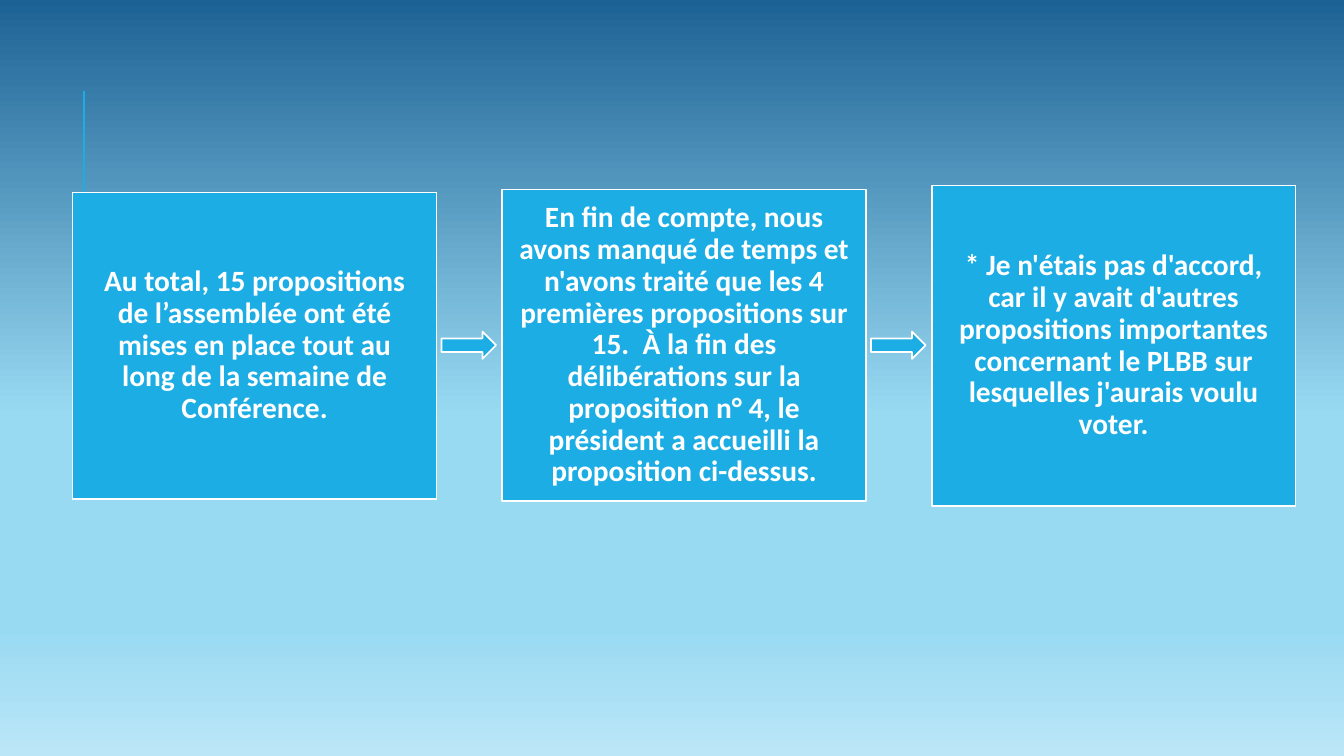
from dataclasses import dataclass

from lxml.etree import SubElement
from pptx import Presentation
from pptx.dml.color import RGBColor
from pptx.enum.shapes import MSO_CONNECTOR as Link, MSO_SHAPE as Kind
from pptx.enum.text import MSO_ANCHOR as Anchor, PP_ALIGN as Align
from pptx.oxml.ns import qn
from pptx.shapes.autoshape import Shape
from pptx.slide import Slide
from pptx.util import Emu, Pt

BLUE = RGBColor(0x1C, 0xAD, 0xE4)
WHITE = RGBColor(0xFF, 0xFF, 0xFF)
DEEP = RGBColor(0x1D, 0x62, 0x94)
SKY = RGBColor(0x99, 0xDA, 0xF3)
PALE = RGBColor(0xBB, 0xE6, 0xF7)
STOPS = [(0, DEEP), (55, SKY), (83, SKY), (100, PALE)]

# Layout in px, 100 to the inch
LEFT, MID = 72, 343
WIDE, STEP = 361, 426
GAP, PAD = 5, 17
TIP_W, TIP_H = 54, 27


@dataclass
class Card:
    high: int
    text: str


CARDS = [
    Card(304, "Au total, 15 propositions de l’assemblée ont été mises en place "
              "tout au long de la semaine de Conférence."),
    Card(309, "En fin de compte, nous avons manqué de temps et n'avons traité "
              "que les 4 premières propositions sur 15.  À la fin des "
              "délibérations sur la proposition n° 4, le président a accueilli "
              "la proposition ci-dessus."),
    Card(318, "* Je n'étais pas d'accord, car il y avait d'autres propositions "
              "importantes concernant le PLBB sur lesquelles j'aurais voulu "
              "voter."),
]


def px(n: int) -> Emu:
    return Emu(n * 9144)


def shade(slide: Slide) -> None:
    """Fill the background with a top-down gradient."""
    fill = slide.background.fill
    fill.gradient()
    fill.gradient_angle = 270
    stops = slide.element.find(".//" + qn("a:gsLst"))
    stops.clear()
    for spot, color in STOPS:
        stop = SubElement(stops, qn("a:gs"), pos=str(spot * 1000))
        SubElement(stop, qn("a:srgbClr"), val=str(color))


def rule(slide: Slide, x: int, top: int, end: int) -> None:
    line = slide.shapes.add_connector(
        Link.STRAIGHT, px(x), px(end), px(x), px(top))
    line.line.color.rgb = BLUE
    line.line.width = Pt(1.5)
    SubElement(line.element.spPr, qn("a:effectLst"))


def block(slide: Slide, kind: Kind, x: int, wide: int, high: int) -> Shape:
    """Draw a blue shape centred on the middle line."""
    top = MID - (high + 1) // 2
    shape = slide.shapes.add_shape(kind, px(x), px(top), px(wide), px(high))
    shape.shadow.inherit = False
    shape.fill.solid()
    shape.fill.fore_color.rgb = BLUE
    shape.line.color.rgb = WHITE
    shape.line.width = Pt(1.25)
    return shape


def write(shape: Shape, text: str, *, size: int = 21, bold: bool = True,
          color: RGBColor = WHITE, face: str = "Calibri") -> None:
    frame = shape.text_frame
    frame.word_wrap = True
    frame.vertical_anchor = Anchor.MIDDLE
    frame.margin_left = frame.margin_right = px(PAD)
    frame.margin_top = frame.margin_bottom = px(PAD)
    para = frame.paragraphs[0]
    para.alignment = Align.CENTER
    para.line_spacing = 0.9
    run = para.add_run()
    run.text = text
    font = run.font
    font.name, font.size, font.bold = face, Pt(size), bold
    font.color.rgb = color


def main() -> None:
    deck = Presentation()
    deck.slide_width, deck.slide_height = px(1333), px(750)
    slide = deck.slides.add_slide(deck.slide_layouts[6])
    shade(slide)
    rule(slide, 83, 90, 190)

    # Cards, with an arrow from each to the next
    for i, card in enumerate(CARDS):
        x = LEFT + i * STEP
        if i:
            block(slide, Kind.RIGHT_ARROW, x - STEP + WIDE + GAP, TIP_W, TIP_H)
        write(block(slide, Kind.RECTANGLE, x, WIDE, card.high), card.text)

    deck.save("out.pptx")


if __name__ == "__main__":
    main()
